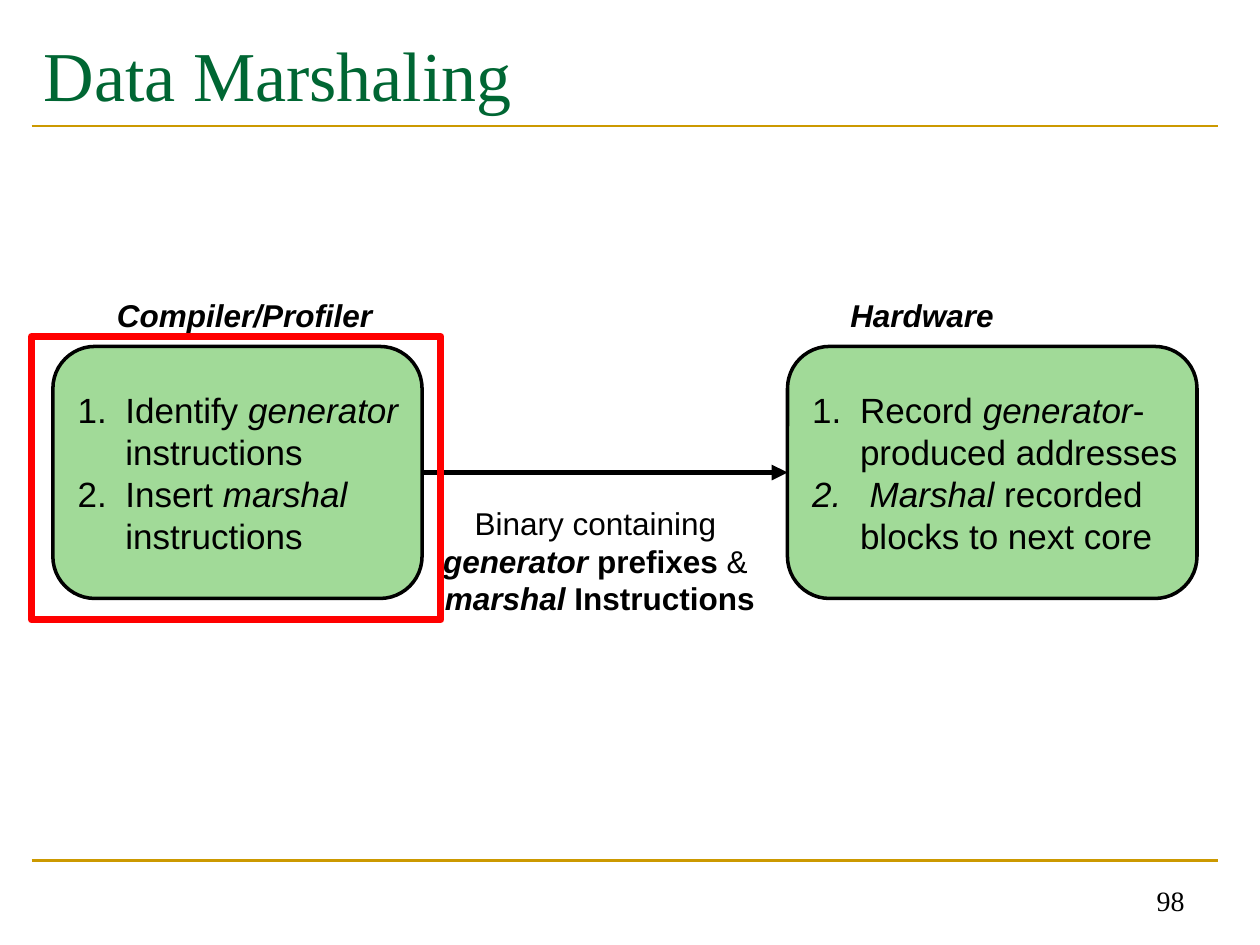
from lxml import etree
from pptx import Presentation
from pptx import util as u
from pptx.dml.color import RGBColor
from pptx.enum import shapes, text
from pptx.oxml import ns

HUES = {"gold": "CC9900", "title": "006633", "leaf": "A1DA98",
        "ink": "000000", "alert": "FF0000"}
LEFT, CENTER, RIGHT = text.PP_ALIGN.LEFT, text.PP_ALIGN.CENTER, text.PP_ALIGN.RIGHT
TOP, MIDDLE, BOTTOM = (text.MSO_ANCHOR.TOP, text.MSO_ANCHOR.MIDDLE,
                       text.MSO_ANCHOR.BOTTOM)


def hue(name):
    return RGBColor.from_string(HUES[name])


def sub(node, tag, **attrs):
    return etree.SubElement(node, ns.qn(tag), **attrs)


def number(para):
    props = para._p.get_or_add_pPr()
    props.set("marL", str(u.Inches(0.38)))
    props.set("indent", str(u.Inches(-0.38)))
    sub(props, "a:buFont", typeface="+mj-lt")
    sub(props, "a:buAutoNum", type="arabicPeriod")


def write(shape, paras, size=18, font="Arial", color="ink", align=LEFT,
          anchor=TOP, wrap=True, listed=False):
    frame = shape.text_frame
    frame.word_wrap = wrap
    frame.vertical_anchor = anchor
    for i, runs in enumerate(paras):
        para = frame.paragraphs[0] if i == 0 else frame.add_paragraph()
        para.alignment = align
        if listed:
            number(para)
        for words, style in runs:
            run = para.add_run()
            run.text = words.rstrip("\n")
            face = run.font
            face.name, face.size = font, u.Pt(size)
            face.bold, face.italic = "b" in style, "i" in style
            face.color.rgb = hue(color)
            if words.endswith("\n"):
                para.add_line_break()


def label(slide, box, paras, **form):
    area = slide.shapes.add_textbox(*map(u.Inches, box))
    write(area, paras, **form)


def block(slide, kind, box, edge, width, fill=None):
    shape = slide.shapes.add_shape(kind, *map(u.Inches, box))
    shape.shadow.inherit = False
    if fill:
        shape.fill.solid()
        shape.fill.fore_color.rgb = hue(fill)
    else:
        shape.fill.background()
    shape.line.color.rgb = hue(edge)
    shape.line.width = u.Pt(width)
    return shape


def rule(slide, x, y, width, color, weight, arrow=False):
    line = slide.shapes.add_connector(
        shapes.MSO_CONNECTOR.STRAIGHT, *map(u.Inches, (x, y, x + width, y)))
    line.line.color.rgb = hue(color)
    line.line.width = u.Pt(weight)
    if arrow:
        sub(line.line._get_or_add_ln(), "a:tailEnd", type="triangle")
    sub(line._element.spPr, "a:effectLst")


def header(slide, box):
    x, y, w, h = box
    rule(slide, x, y + h, w, "gold", 1.5)
    label(slide, box, [[("Data Marshaling", "")]], size=40,
          font="Times New Roman", color="title", anchor=MIDDLE)


def footer(slide, box):
    x, y, w, h = box
    rule(slide, x, y, w, "gold", 1.5)
    label(slide, (x + w - 2.5, y, 2.33, h), [[("98", "")]], size=16,
          font="Times New Roman", align=RIGHT, anchor=BOTTOM)


def stage(slide, box, name, inset, width, steps):
    x, y, w, h = box
    card = block(slide, shapes.MSO_SHAPE.ROUNDED_RECTANGLE, box, "ink", 2, "leaf")
    write(card, steps, size=20, anchor=MIDDLE, wrap=False, listed=True)
    label(slide, (x + inset, y - 0.45, width, 0.4), [[(name, "bi")]])


def link(slide, box):
    x, y, w, h = box
    rule(slide, x, y, w, "ink", 3, arrow=True)
    label(slide, (x, y + 0.2, w - 0.08, h),
          [[("Binary containing \n", ""), ("generator ", "bi"),
            ("prefixes", "b"), (" & \n", ""), ("marshal", "bi"),
            (" Instructions", "b")]], align=CENTER)


def main():
    deck = Presentation()
    deck.slide_width, deck.slide_height = u.Inches(10), u.Inches(7.5)
    slide = deck.slides.add_slide(deck.slide_layouts[6])
    header(slide, (0.25, 0.17, 9.42, 0.83))
    footer(slide, (0.25, 6.83, 9.42, 0.5))
    stage(slide, (0.42, 2.75, 2.93, 2), "Compiler/Profiler", 0.41, 2.27,
          [[("Identify ", ""), ("generator\n", "i"), ("instructions", "")],
           [("Insert ", ""), ("marshal\n", "i"), ("instructions", "")]])
    stage(slide, (6.25, 2.75, 3.25, 2), "Hardware", 0.4, 1.9,
          [[("Record ", ""), ("generator", "i"), ("-\n", ""),
            ("produced addresses", "")],
           [(" Marshal ", "i"), ("recorded\n", ""), ("blocks to next core", "")]])
    link(slide, (3.35, 3.75, 2.9, 1))
    block(slide, shapes.MSO_SHAPE.RECTANGLE, (0.25, 2.67, 3.25, 2.25), "alert", 4)
    deck.save("out.pptx")


if __name__ == "__main__":
    main()
